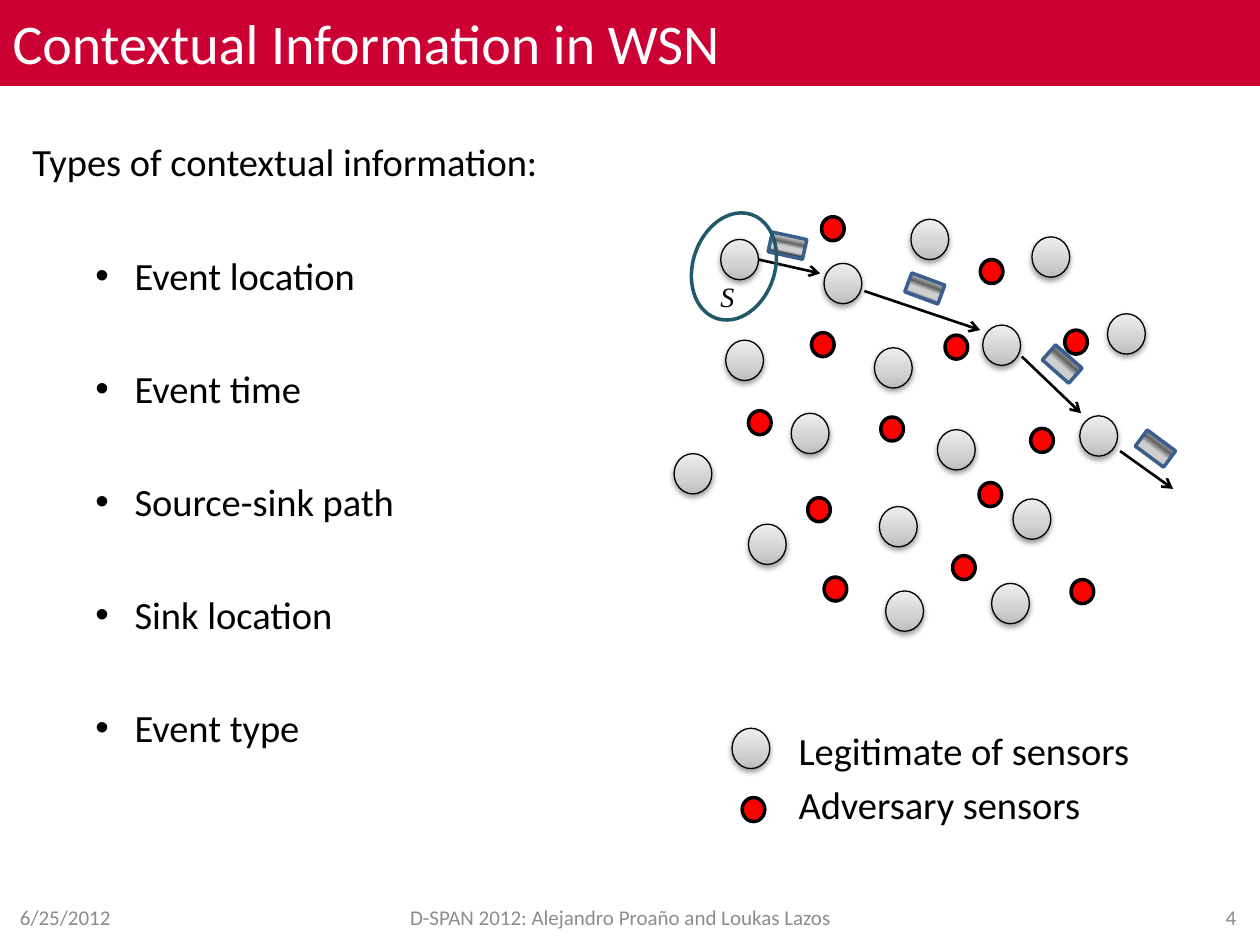
"""Build the slide on contextual information in wireless sensor networks."""
from dataclasses import dataclass, field

from lxml.etree import SubElement
from pptx import Presentation
from pptx.dml.color import RGBColor
from pptx.enum.shapes import MSO_CONNECTOR, MSO_SHAPE
from pptx.enum.text import MSO_ANCHOR, MSO_AUTO_SIZE, PP_ALIGN
from pptx.oxml import parse_xml
from pptx.oxml.ns import nsdecls, qn
from pptx.util import Inches, Pt

BLACK = RGBColor(0x00, 0x00, 0x00)
WHITE = RGBColor(0xFF, 0xFF, 0xFF)
CRIMSON = RGBColor(0xCC, 0x00, 0x33)
GREY = RGBColor(0x8C, 0x8C, 0x8C)
RED = RGBColor(0xFF, 0x00, 0x00)
BLUE = RGBColor(0x3A, 0x5F, 0x8C)
TEAL = RGBColor(0x21, 0x59, 0x68)

SILVER = ((0, "BDBDBD"), (35, "D1D1D1"), (100, "EEEEEE"))
CHROME = ((0, "FFFFFF"), (16, "1F1F1F"), (18, "FFFFFF"), (42, "636363"), (53, "CFCFCF"),
          (66, "CFCFCF"), (76, "1F1F1F"), (79, "FFFFFF"), (100, "7F7F7F"))

BODY = {"name": "Calibri", "size": Pt(22)}
HEAD = {"name": "Calibri", "size": Pt(32), "bold": False}
FOOT = {"name": "Calibri", "size": Pt(12)}
MARK = {"name": "Times New Roman", "size": Pt(16), "italic": True}


@dataclass
class Kind:
    form: MSO_SHAPE
    wide: float
    high: float
    line: RGBColor
    weight: float
    fill: RGBColor | None = None
    stops: tuple = ()
    angle: int = 0
    shade: bool = False


@dataclass
class Label:
    box: tuple
    lines: list
    font: dict
    color: RGBColor = BLACK
    para: dict = field(default_factory=dict)
    frame: dict = field(default_factory=dict)


SENSOR = Kind(MSO_SHAPE.OVAL, 0.3, 0.32, BLACK, 0.75, stops=SILVER, angle=270, shade=True)
SPY = Kind(MSO_SHAPE.OVAL, 0.18, 0.19, BLACK, 2, fill=RED)
PACKET = Kind(MSO_SHAPE.RECTANGLE, 0.28, 0.16, BLUE, 2, stops=CHROME, angle=90)
RING = Kind(MSO_SHAPE.OVAL, 0.65, 0.87, TEAL, 2)

SENSORS = [(6.54, 2.09), (5.94, 4.16), (6.28, 3.28), (5.72, 1.9), (5.76, 2.7), (5.35, 3.6),
           (8.19, 1.88), (7.87, 4.63), (8.79, 2.49), (7.23, 1.74), (7.8, 2.58), (6.98, 4.02),
           (8.57, 3.3), (8.04, 3.96), (6.94, 2.76), (7.44, 3.41), (7.03, 4.69)]
HOPS = [(6.02, 2.06, 6.51, 2.17), (6.86, 2.31, 7.78, 2.62),
        (8.11, 2.83, 8.58, 3.28), (8.89, 3.58, 9.31, 3.88)]
PACKETS = [(7.2, 2.21, 20.3), (8.29, 2.81, 41.3), (9.03, 3.48, 36.5), (6.11, 1.87, 12.2)]
SPIES = [(7.56, 4.41), (6.54, 4.58), (6.44, 2.64), (6.52, 1.72), (6.99, 3.31), (7.77, 3.83),
         (6.41, 3.95), (5.94, 3.26), (7.78, 2.06), (8.45, 2.62), (8.5, 4.6), (7.5, 2.66),
         (8.18, 3.4)]
TOPICS = ["Event location", "Event time", "Source-sink path", "Sink location", "Event type"]
MIDDLE = {"vertical_anchor": MSO_ANCHOR.MIDDLE}
FEET = [
    Label((0.06, 7.08, 2.33, 0.4), ["6/25/2012"], FOOT, GREY, frame=MIDDLE),
    Label((7.58, 7.08, 2.33, 0.4), ["4"], FOOT, GREY, {"alignment": PP_ALIGN.RIGHT}, MIDDLE),
    Label((3.07, 7.08, 3.71, 0.4), ["D-SPAN 2012: Alejandro Proaño and Loukas Lazos"],
          FOOT, GREY, {"alignment": PP_ALIGN.CENTER}, MIDDLE),
]


def assign(target, values: dict) -> None:
    for name, value in values.items():
        setattr(target, name, value)


def blend(shape, stops: tuple, angle: int) -> None:
    shape.fill.background()
    marks = "".join(f'<a:gs pos="{pos * 1000}"><a:srgbClr val="{tone}"/></a:gs>'
                    for pos, tone in stops)
    blank = shape._element.spPr.find(qn("a:noFill"))
    blank.getparent().replace(blank, parse_xml(
        f'<a:gradFill {nsdecls("a")} rotWithShape="1"><a:gsLst>{marks}</a:gsLst>'
        f'<a:lin ang="{angle * 60000}" scaled="0"/></a:gradFill>'))


def shade(shape) -> None:
    shape._element.spPr.find(qn("a:effectLst")).append(parse_xml(
        f'<a:outerShdw {nsdecls("a")} blurRad="40000" dist="20000" dir="5400000" '
        'rotWithShape="0"><a:srgbClr val="000000"><a:alpha val="38000"/>'
        '</a:srgbClr></a:outerShdw>'))


def draw(shapes, kind: Kind, left: float, top: float, turn: float = 0) -> None:
    shape = shapes.add_shape(kind.form, *map(Inches, (left, top, kind.wide, kind.high)))
    shape.rotation = turn
    shape.shadow.inherit = False
    shape.line.color.rgb = kind.line
    shape.line.width = Pt(kind.weight)
    if kind.stops:
        blend(shape, kind.stops, kind.angle)
    elif kind.fill:
        shape.fill.solid()
        shape.fill.fore_color.rgb = kind.fill
    else:
        shape.fill.background()
    if kind.shade:
        shade(shape)


def write(frame, label: Label) -> list:
    assign(frame, {"word_wrap": True, **label.frame})
    frame.text = "\n".join(label.lines)
    for para in frame.paragraphs:
        assign(para, label.para)
        for run in para.runs:
            assign(run.font, label.font)
            run.font.color.rgb = label.color
    return list(frame.paragraphs)


def place(shapes, label: Label) -> list:
    return write(shapes.add_textbox(*map(Inches, label.box)).text_frame, label)


def bullet(para) -> None:
    props = para._p.get_or_add_pPr()
    props.set("marL", str(Inches(0.81)))
    props.set("indent", str(Inches(-0.31)))
    SubElement(props, qn("a:buFont")).set("typeface", "Arial")
    SubElement(props, qn("a:buChar")).set("char", "•")


def arrow(shapes, *ends: float) -> None:
    link = shapes.add_connector(MSO_CONNECTOR.STRAIGHT, *map(Inches, ends))
    link.line.color.rgb = BLACK
    link.line.width = Pt(1.5)
    SubElement(link.line._get_or_add_ln(), qn("a:tailEnd")).set("type", "arrow")
    SubElement(link._element.spPr, qn("a:effectLst"))


def banner(title) -> None:
    box = (0, 0, 10, 0.67)
    assign(title, dict(zip(("left", "top", "width", "height"), map(Inches, box))))
    title.fill.solid()
    title.fill.fore_color.rgb = CRIMSON
    title.line.color.rgb = CRIMSON
    title.line.width = Pt(2)
    write(title.text_frame, Label(
        box, ["Contextual Information in WSN"], HEAD, WHITE, {"alignment": PP_ALIGN.LEFT},
        {**MIDDLE, "auto_size": MSO_AUTO_SIZE.NONE}))


def main() -> None:
    deck = Presentation()
    assign(deck, {"slide_width": Inches(10), "slide_height": Inches(7.5)})
    slide = deck.slides.add_slide(deck.slide_layouts[5])
    shapes = slide.shapes
    banner(shapes.title)
    intro, *topics = place(shapes, Label((0.16, 1.05, 4.96, 5.64),
                                         ["Types of contextual information:", *TOPICS], BODY))
    for topic in topics:
        topic.space_before = Pt(38.3)
        bullet(topic)
    for foot in FEET:
        place(shapes, foot)
    for spot in SENSORS:
        draw(shapes, SENSOR, *spot)
    for hop in HOPS:
        arrow(shapes, *hop)
    for spot in PACKETS:
        draw(shapes, PACKET, *spot)
    for spot in SPIES:
        draw(shapes, SPY, *spot)
    place(shapes, Label((5.62, 2.17, 0.33, 0.37), ["S"], MARK))
    draw(shapes, RING, 5.5, 1.68, 18.5)
    legend = shapes.add_group_shape().shapes
    place(legend, Label((6.24, 5.72, 3.04, 0.92), ["Legitimate of sensors", "Adversary sensors"],
                        BODY, para={"space_before": Pt(4.4)}))
    draw(legend, SENSOR, 5.81, 5.78)
    draw(legend, SPY, 5.89, 6.33)
    deck.save("out.pptx")


if __name__ == "__main__":
    main()
